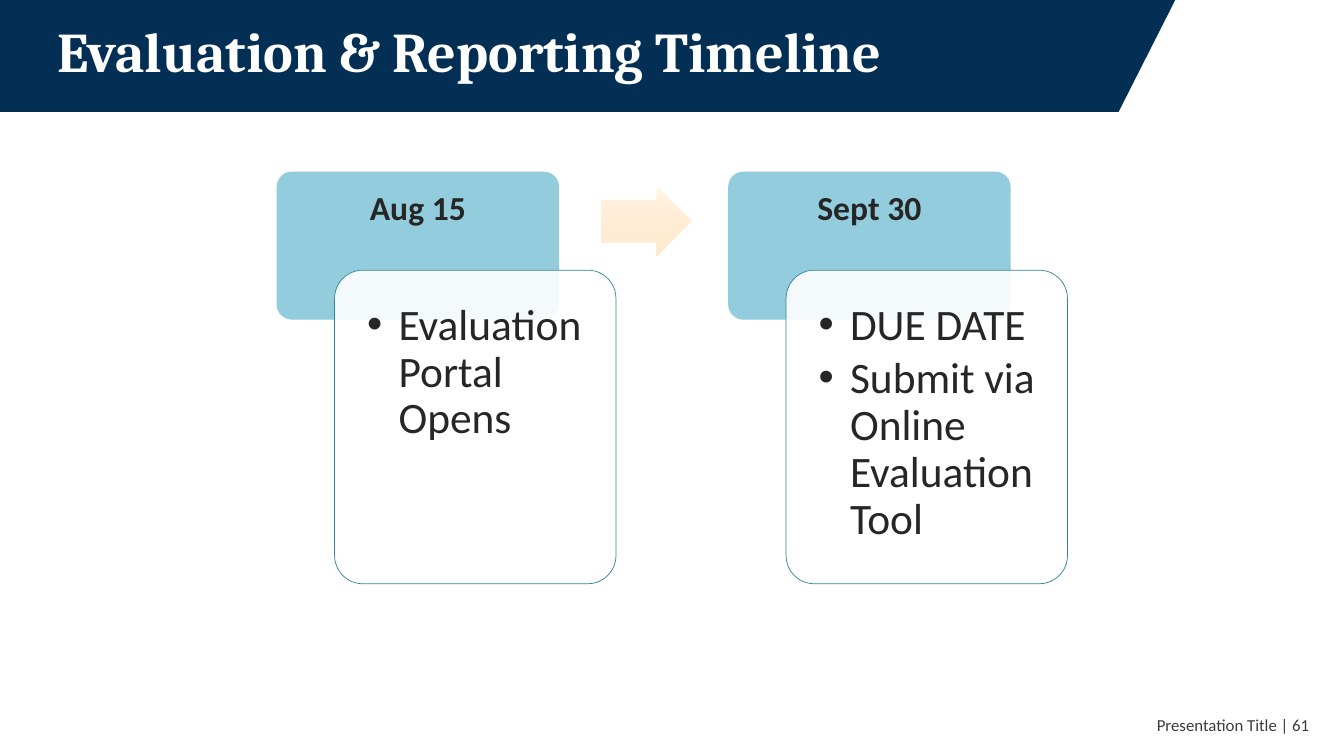
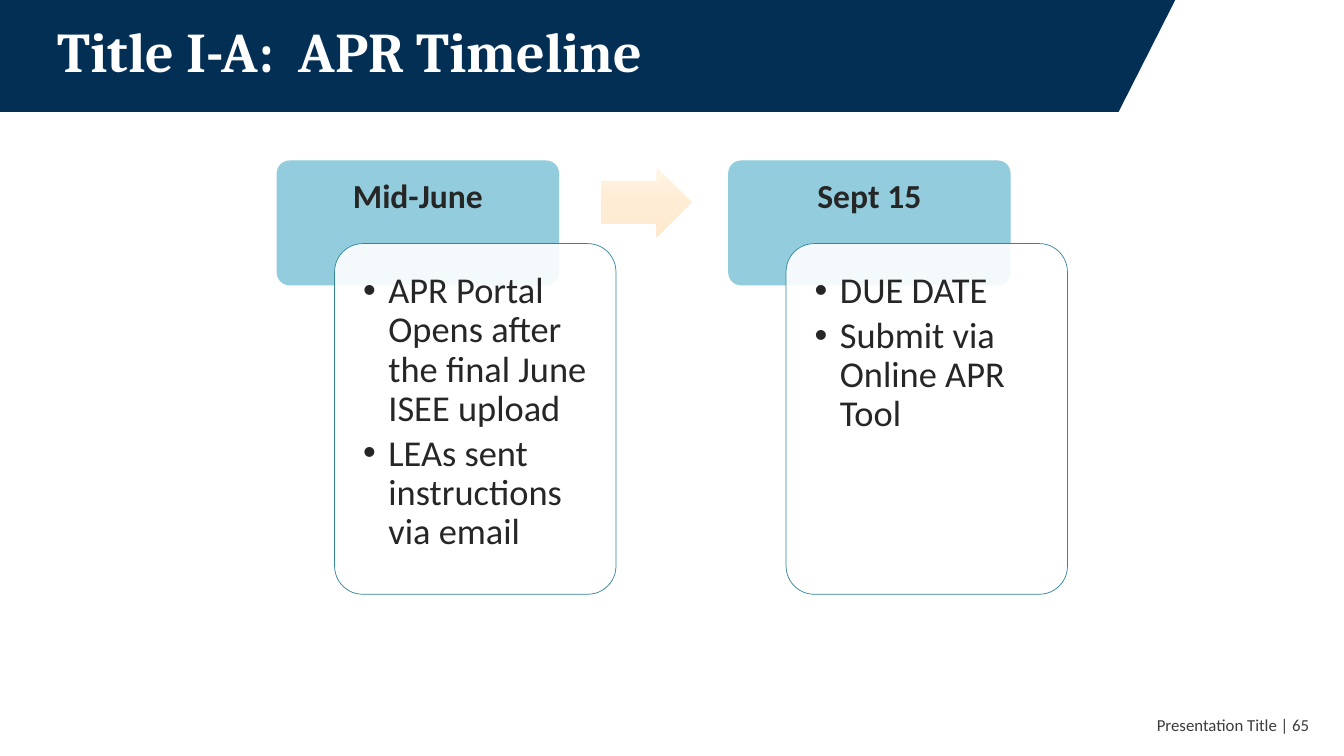
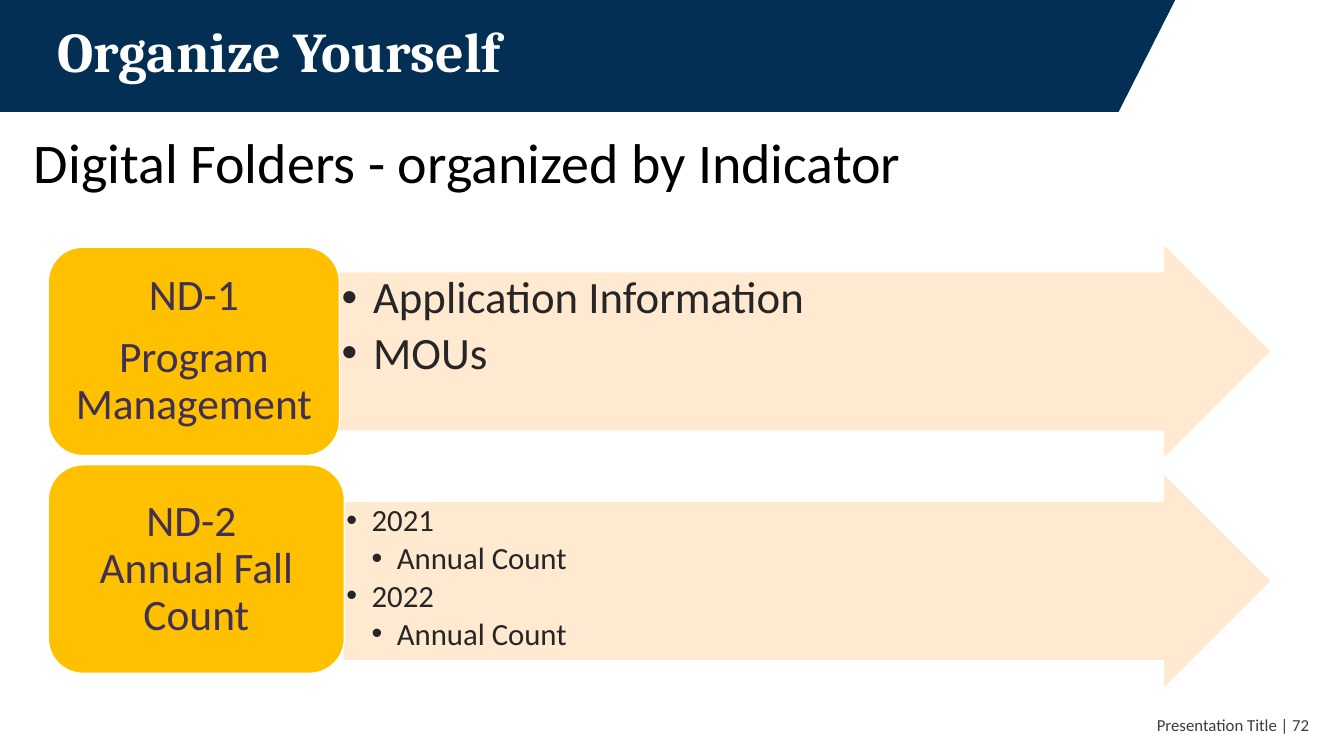
from copy import deepcopy

from lxml.etree import SubElement
from pptx import Presentation
from pptx.dml.color import RGBColor
from pptx.enum.shapes import MSO_SHAPE as Preset
from pptx.enum.text import MSO_ANCHOR as Anchor, MSO_AUTO_SIZE as AutoSize, PP_ALIGN as Align
from pptx.oxml.ns import qn
from pptx.util import Pt

NAVY = RGBColor(0x03, 0x2F, 0x55)
WHITE = RGBColor(0xFF, 0xFF, 0xFF)
BLACK = RGBColor(0x00, 0x00, 0x00)
GRAY = RGBColor(0x3C, 0x3C, 0x3C)
INK = RGBColor(0x26, 0x26, 0x26)
SKY = RGBColor(0x93, 0xCD, 0xDD)
TEAL = RGBColor(0x31, 0x85, 0x9C)
GOLD = RGBColor(0xFF, 0xC0, 0x00)
PLUM = RGBColor(0x40, 0x31, 0x52)
PEACH = RGBColor(0xFF, 0xE8, 0xCC)
PEACH_STOPS = [
    (0, RGBColor(0xFF, 0xF4, 0xE4)),
    (0.5, RGBColor(0xFF, 0xEC, 0xD4)),
    (1, RGBColor(0xFF, 0xEA, 0xCE)),
]
BODY_FONT = "Calibri"
TITLE_FONT = "Cambria"
TITLE_ONLY, TITLE_AND_BODY = 5, 1


class Deck:
    """Slide builder that holds the shared style and the current slide."""

    def __init__(self):
        self.presentation = Presentation()
        self.presentation.slide_width = Pt(960)
        self.presentation.slide_height = Pt(540)
        self.slide = None

    def add_slide(self, title, number, layout=TITLE_ONLY):
        layouts = self.presentation.slide_layouts
        self.slide = self.presentation.slides.add_slide(layouts[layout])
        self.band()
        placeholder = self.slide.shapes.title
        self.slide.shapes.element.append(placeholder.element)
        self.place(placeholder, 34, 0, 828, 78)
        self.set_text(placeholder, [title], 40, WHITE, anchor=Anchor.MIDDLE,
                      font=TITLE_FONT, bold=True)
        footer = self.slide.shapes.add_textbox(Pt(726.5), Pt(503), Pt(216), Pt(29))
        self.set_text(footer, [f"Presentation Title | {number}"], 12, GRAY,
                      align=Align.RIGHT, anchor=Anchor.MIDDLE, line_spacing=1)

    def band(self):
        builder = self.slide.shapes.build_freeform(0, 0)
        corners = [(839.5, 0), (799, 80), (0, 80)]
        builder.add_line_segments([(Pt(x), Pt(y)) for x, y in corners])
        self.paint(builder.convert_to_shape(), NAVY)

    def place(self, shape, left, top, width, height):
        shape.left, shape.top = Pt(left), Pt(top)
        shape.width, shape.height = Pt(width), Pt(height)

    def paint(self, shape, fill, line=None, weight=1, fill_alpha=100, line_alpha=100):
        shape.shadow.inherit = False
        shape.fill.solid()
        shape.fill.fore_color.rgb = fill
        self.fade(shape.element.spPr, fill_alpha)
        if line is None:
            shape.line.fill.background()
        else:
            shape.line.color.rgb = line
            shape.line.width = Pt(weight)
            self.fade(shape.element.spPr.find(qn("a:ln")), line_alpha)

    def fade(self, parent, percent):
        if percent < 100:
            color = parent.find(qn("a:solidFill")).find(qn("a:srgbClr"))
            SubElement(color, qn("a:alpha"), val=str(percent * 1000))

    def shape(self, preset, left, top, width, height, adjustments=()):
        shape = self.slide.shapes.add_shape(preset, Pt(left), Pt(top), Pt(width), Pt(height))
        for index, value in enumerate(adjustments):
            shape.adjustments[index] = value
        return shape

    def set_text(self, shape, items, size, color, align=Align.LEFT, anchor=Anchor.TOP,
                 insets=(7.2, 3.6), indent=0, after=0, font=BODY_FONT, bold=False,
                 line_spacing=0.9):
        frame = shape.text_frame
        frame.word_wrap = True
        frame.auto_size = AutoSize.NONE
        frame.vertical_anchor = anchor
        frame.margin_left = frame.margin_right = Pt(insets[0])
        frame.margin_top = frame.margin_bottom = Pt(insets[1])
        for index, item in enumerate(items):
            text, level = item if isinstance(item, tuple) else (item, 0)
            paragraph = frame.add_paragraph() if index else frame.paragraphs[0]
            paragraph.text = text
            paragraph.level = level
            paragraph.alignment = align
            paragraph.line_spacing = line_spacing
            paragraph.space_before = Pt(0)
            paragraph.space_after = Pt(round(size * after, 2))
            self.bullet(paragraph, indent, level)
            paragraph.font.name = font
            paragraph.font.size = Pt(size)
            paragraph.font.bold = bold
            paragraph.font.color.rgb = color

    def bullet(self, paragraph, indent, level):
        properties = paragraph._p.get_or_add_pPr()
        properties.set("marL", str(Pt(indent * (level + 1))))
        properties.set("indent", str(Pt(-indent)))
        if indent:
            SubElement(properties, qn("a:buFont"), typeface="Arial")
            SubElement(properties, qn("a:buChar"), char="•")
        else:
            SubElement(properties, qn("a:buNone"))

    def step(self, left, top, header, height, date, items, size, indent):
        tag = self.shape(Preset.ROUNDED_RECTANGLE, left, top, 201, header * 1.5, [0.1])
        self.paint(tag, SKY, SKY, 0.75)
        self.set_text(tag, [date], 24, INK, Align.CENTER, insets=(10.5, 10.5), bold=True)
        card = self.shape(Preset.ROUNDED_RECTANGLE, left + 41, top + header, 201, height, [0.1])
        self.paint(card, WHITE, TEAL, 0.5, fill_alpha=90)
        inset = round(size * 0.56, 2)
        self.set_text(card, items, size, INK, insets=(inset, inset), indent=indent, after=0.15)

    def step_arrow(self, left, middle):
        width, height = 65, 50
        arrow = self.shape(Preset.RIGHT_ARROW, left, middle - height / 2, width, height,
                           [0.6, 0.5])
        arrow.shadow.inherit = False
        arrow.line.fill.background()
        arrow.fill.gradient()
        arrow.fill.gradient_angle = 270
        stop_list = arrow.element.spPr.find(qn("a:gradFill")).find(qn("a:gsLst"))
        stop_list.append(deepcopy(stop_list[0]))
        for stop, (position, color) in zip(arrow.fill.gradient_stops, PEACH_STOPS):
            stop.position = position
            stop.color.rgb = color

    def timeline(self, top, header, height, steps, size, indent):
        first_left, pitch = 198, 322.5
        for index, (date, items) in enumerate(steps):
            left = first_left + index * pitch
            if index:
                self.step_arrow(left - 91.5, top + header / 2)
            self.step(left, top, header, height, date, items, size, indent)

    def subtitle(self, text):
        placeholder = self.slide.placeholders[1]
        self.place(placeholder, 17, 93, 828, 343)
        self.set_text(placeholder, [text], 40, BLACK)

    def folder(self, block_top, block_width, arrow_top, label, items, size, indent):
        left, right, height = 34.5, 906.5, 149
        arrow_left = left + block_width
        arrow = self.shape(Preset.RIGHT_ARROW, arrow_left, arrow_top, right - arrow_left,
                           height, [0.75, 0.5])
        self.paint(arrow, PEACH, PEACH, fill_alpha=90, line_alpha=90)
        self.set_text(arrow, items, size, INK, insets=(1.5, 1.5), indent=indent, after=0.15)
        block = self.shape(Preset.ROUNDED_RECTANGLE, left, block_top, block_width, height)
        self.paint(block, GOLD, WHITE)
        self.set_text(block, label, 31, PLUM, Align.CENTER, Anchor.MIDDLE,
                      insets=(9.4, 4.3), after=0.35)


def main():
    deck = Deck()

    deck.add_slide("Evaluation & Reporting Timeline", 61)
    deck.timeline(123, 70, 224, [
        ("Aug 15", ["Evaluation Portal Opens"]),
        ("Sept 30", ["DUE DATE", "Submit via Online Evaluation Tool"]),
    ], size=31, indent=22.5)

    deck.add_slide("Title I-A:  APR Timeline", 65)
    deck.timeline(115, 59, 250.5, [
        ("Mid-June", ["APR Portal Opens after the final June ISEE upload",
                      "LEAs sent instructions via email"]),
        ("Sept 15", ["DUE DATE", "Submit via Online APR Tool"]),
    ], size=26, indent=18)

    deck.add_slide("Organize Yourself", 72, TITLE_AND_BODY)
    deck.subtitle("Digital Folders - organized by Indicator")
    deck.folder(176.5, 208, 176.5, ["ND-1", "Program Management"],
                ["Application Information", "MOUs"], size=32, indent=22.5)
    deck.folder(332, 211.5, 340.5, ["ND-2 \vAnnual Fall Count"],
                ["2021", ("Annual Count", 1), "2022", ("Annual Count", 1)],
                size=22, indent=18)

    deck.presentation.save("out.pptx")


if __name__ == "__main__":
    main()
